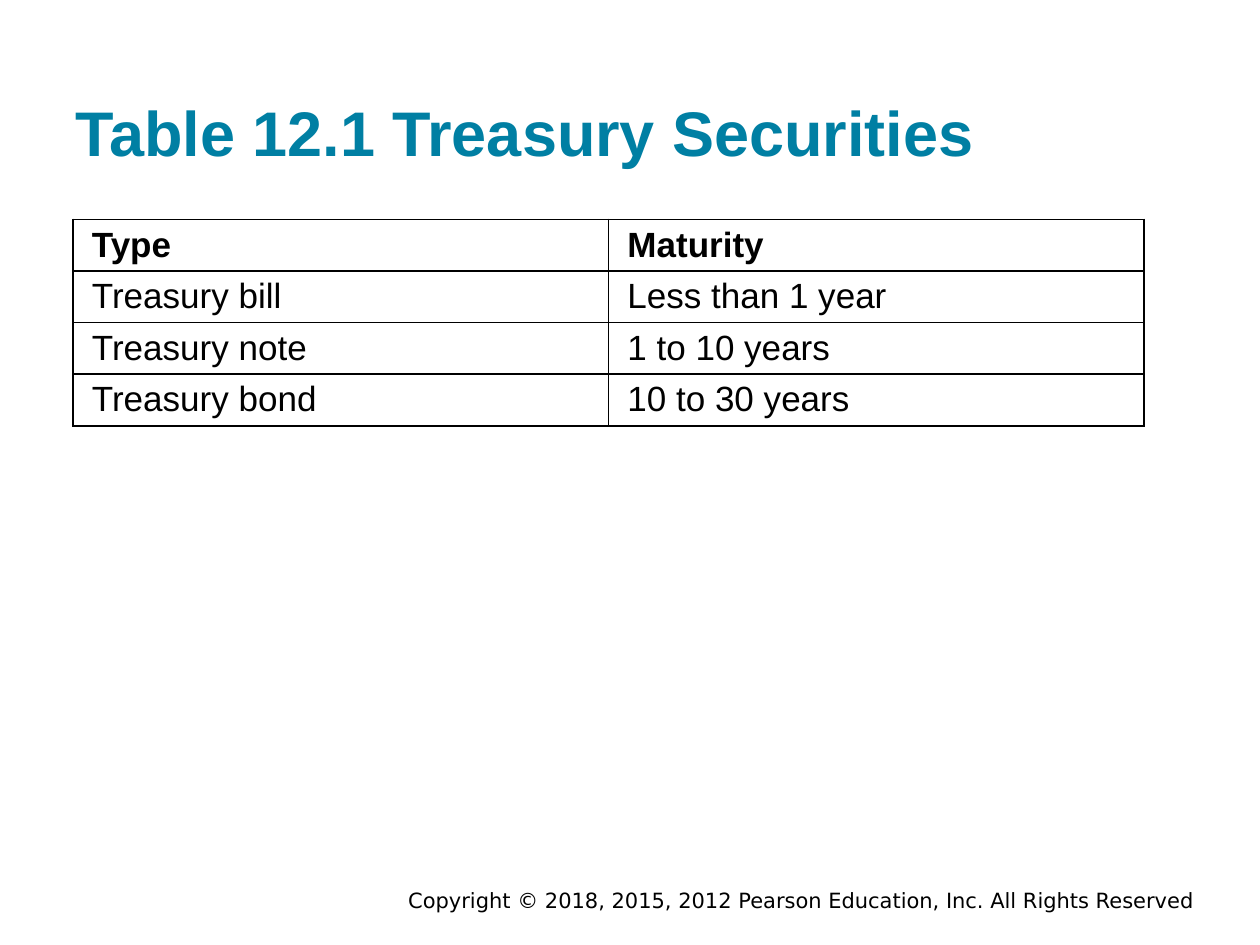
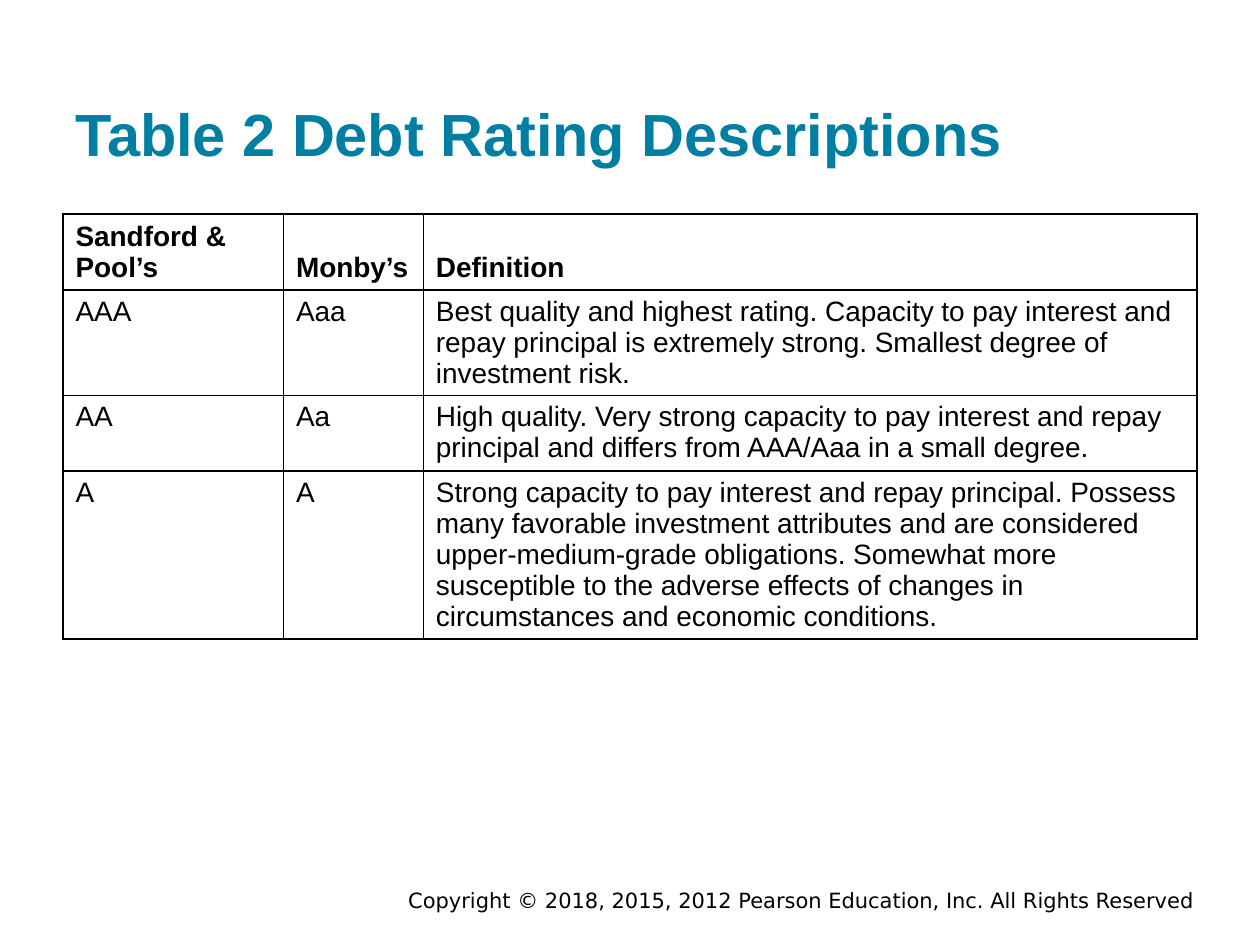
"""Build two slides with tables of treasury securities and debt ratings."""
from lxml.etree import SubElement
from pptx import Presentation
from pptx.dml.color import RGBColor
from pptx.enum.text import MSO_ANCHOR, PP_ALIGN
from pptx.oxml.ns import qn
from pptx.util import Inches, Pt

TEAL = RGBColor(0x00, 0x7F, 0xA3)
BLACK = RGBColor(0x00, 0x00, 0x00)
WHITE = RGBColor(0xFF, 0xFF, 0xFF)
COPYRIGHT = "Copyright © 2018, 2015, 2012 Pearson Education, Inc. All Rights Reserved"

TABLE_SLIDES = [
    {
        "title": "Table 12.1 Treasury Securities",
        "title_width": 9,
        "title_size": 36,
        "origin": (0.58, 1.74),
        "columns": [4.25, 4.25],
        "heights": [0.41] * 4,
        "size": 20,
        "line_pitch": 22.2,
        "side_margin": 0.15,
        "header_anchor": MSO_ANCHOR.TOP,
        "rows": [
            ("Type", "Maturity"),
            ("Treasury bill", "Less than 1 year"),
            ("Treasury note", "1 to 10 years"),
            ("Treasury bond", "10 to 30 years"),
        ],
    },
    {
        "title": "Table 2 Debt Rating Descriptions",
        "title_width": 9.34,
        "title_size": 34,
        "origin": (0.5, 1.7),
        "columns": [1.75, 1.11, 6.14],
        "heights": [0.6, 0.84, 0.6, 1.33],
        "size": 16,
        "line_pitch": 17.7,
        "side_margin": 0.1,
        "header_anchor": MSO_ANCHOR.BOTTOM,
        "rows": [
            ("Sandford & Pool’s", "Monby’s", "Definition"),
            ("AAA", "Aaa",
             "Best quality and highest rating. Capacity to pay interest and repay "
             "principal is extremely strong. Smallest degree of investment risk."),
            ("AA", "Aa",
             "High quality. Very strong capacity to pay interest and repay "
             "principal and differs from AAA/Aaa in a small degree."),
            ("A", "A",
             "Strong capacity to pay interest and repay principal. Possess many "
             "favorable investment attributes and are considered "
             "upper-medium-grade obligations. Somewhat more susceptible to the "
             "adverse effects of changes in circumstances and economic conditions."),
        ],
    },
]


def write_text(frame, text, size, color=BLACK, bold=False, font="Arial",
               align=PP_ALIGN.LEFT, line_spacing=None):
    """Write one formatted paragraph into a text frame."""
    paragraph = frame.paragraphs[0]
    paragraph.alignment = align
    paragraph.line_spacing = line_spacing
    run = paragraph.add_run()
    run.text = text
    run.font.name = font
    run.font.size = Pt(size)
    run.font.bold = bold
    run.font.color.rgb = color


def outline_cell(cell):
    """Draw a thin black line on all four sides of a table cell."""
    properties = cell._tc.get_or_add_tcPr()
    for position, side in enumerate(("a:lnL", "a:lnR", "a:lnT", "a:lnB")):
        line = SubElement(properties, qn(side), w=str(Pt(1)))
        fill = SubElement(line, qn("a:solidFill"))
        SubElement(fill, qn("a:srgbClr"), val=str(BLACK))
        properties.insert(position, line)


deck = Presentation()
deck.slide_width = Inches(10)
deck.slide_height = Inches(7.5)

for content in TABLE_SLIDES:
    slide = deck.slides.add_slide(deck.slide_layouts[6])

    footer = slide.shapes.add_textbox(
        Inches(1.75), Inches(7.03), Inches(7.83), Inches(0.22)).text_frame
    footer.word_wrap = True
    footer.vertical_anchor = MSO_ANCHOR.MIDDLE
    write_text(footer, COPYRIGHT, 12, font="DejaVu Sans", align=PP_ALIGN.RIGHT)

    title = slide.shapes.add_textbox(
        Inches(0.5), Inches(0.24), Inches(content["title_width"]), Inches(1.2)).text_frame
    title.word_wrap = True
    title.vertical_anchor = MSO_ANCHOR.BOTTOM
    title.margin_top = title.margin_bottom = Inches(0.1)
    write_text(title, content["title"], content["title_size"], color=TEAL, bold=True)

    left, top = content["origin"]
    table = slide.shapes.add_table(
        len(content["rows"]), len(content["columns"]), Inches(left), Inches(top),
        Inches(sum(content["columns"])), Inches(sum(content["heights"]))).table
    table.horz_banding = False
    for column, width in zip(table.columns, content["columns"]):
        column.width = Inches(width)
    for row, height in zip(table.rows, content["heights"]):
        row.height = Inches(height)

    for row_index, entries in enumerate(content["rows"]):
        is_header = row_index == 0
        for column_index, entry in enumerate(entries):
            cell = table.cell(row_index, column_index)
            cell.fill.solid()
            cell.fill.fore_color.rgb = WHITE
            cell.margin_left = cell.margin_right = Inches(content["side_margin"])
            cell.vertical_anchor = content["header_anchor"] if is_header else MSO_ANCHOR.TOP
            outline_cell(cell)
            write_text(cell.text_frame, entry, content["size"], bold=is_header,
                       line_spacing=Pt(content["line_pitch"]))

deck.save("out.pptx")
